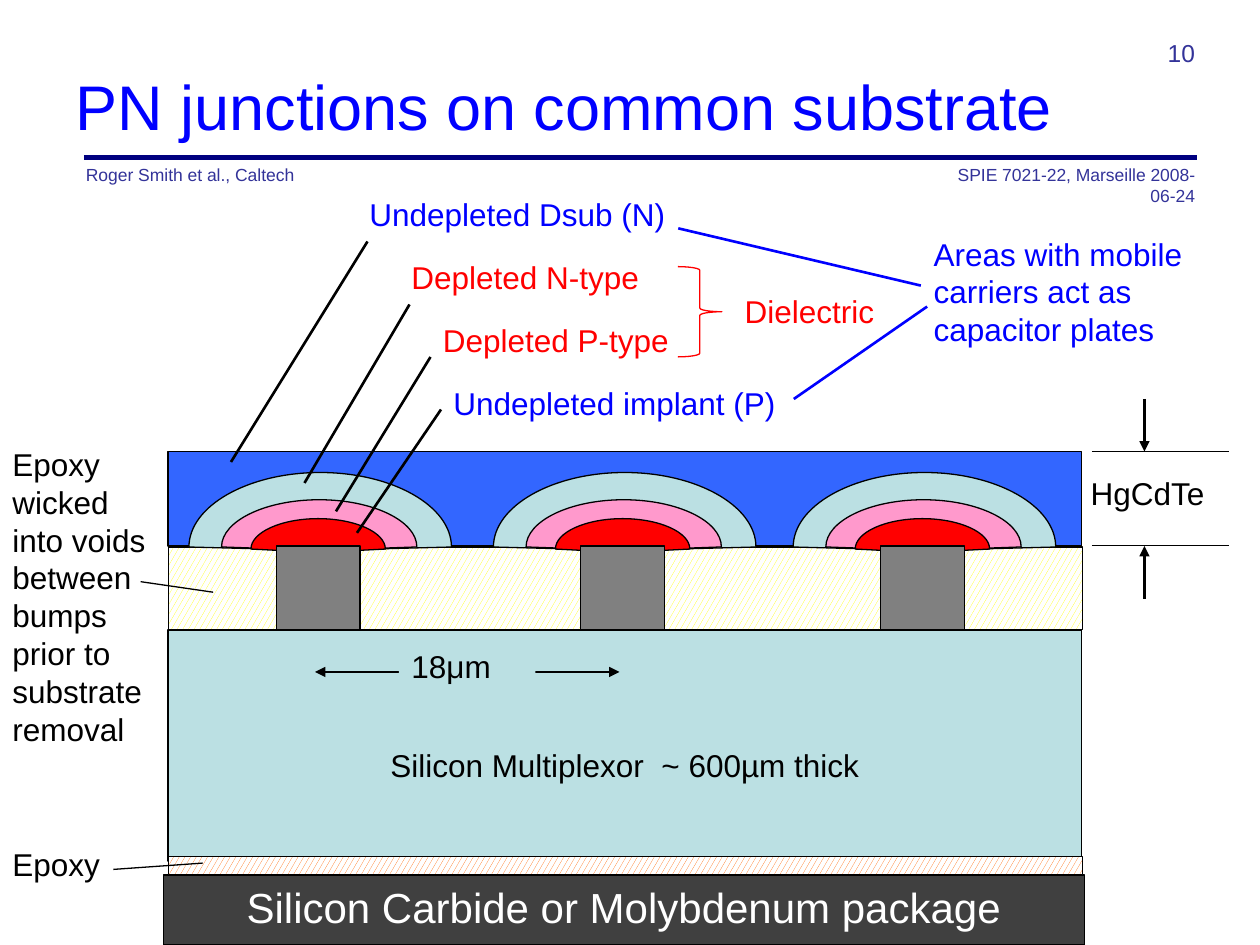
from dataclasses import dataclass

from lxml.etree import SubElement
from pptx import Presentation
from pptx.dml.color import RGBColor
from pptx.enum.dml import MSO_PATTERN
from pptx.enum.shapes import MSO_CONNECTOR, MSO_SHAPE
from pptx.enum.text import MSO_ANCHOR, MSO_AUTO_SIZE, PP_ALIGN
from pptx.oxml.ns import qn
from pptx.util import Inches, Pt


@dataclass(frozen=True)
class Theme:
    font: str = "Arial"
    black: str = "000000"
    white: str = "FFFFFF"
    blue: str = "0000FF"
    red: str = "FF0000"
    navy: str = "000080"
    muted: str = "333399"
    bulk: str = "3366FF"
    pale: str = "BBE0E3"
    pink: str = "FF99CC"
    gray: str = "808080"
    dark: str = "404040"
    yellow: str = "FFFF00"
    orange: str = "FF6600"
    small: int = 10
    page: int = 14
    body: int = 18
    large: int = 24
    title: int = 36
    thin: float = 0.75
    arrow: float = 1.25
    bold: float = 1.5
    rule: float = 2.5


T = Theme()
COLS, ROWS = 120, 90
BEND = 0.55
LEFT, RIGHT = PP_ALIGN.LEFT, PP_ALIGN.RIGHT

TITLE = "PN junctions on common substrate"
HEADER = [
    ("SPIE 7021-22, Marseille 2008-06-24", (88.25, 15, 26.75, 4), T.small, RIGHT),
    ("Roger Smith et al., Caltech", (7, 15, 38, 3), T.small, LEFT),
    ("10", (90, 3, 25, 5), T.page, RIGHT),
]
LABELS = [
    ("Undepleted Dsub (N)", (34, 18, 48, 4.8), T.blue),
    ("Depleted N-type", (38, 24, 32, 4.8), T.red),
    ("Depleted P-type", (41, 30, 32, 4.8), T.red),
    ("Undepleted implant (P)", (42, 36, 48, 4.8), T.blue),
    ("HgCdTe", (102.7, 44.55, 17.3, 6), T.black),
    ("Epoxy wicked into voids between bumps prior to substrate removal",
     (0, 41.8, 16, 30.2), T.black),
    ("Epoxy", (0, 79.9, 16, 4.8), T.black),
    ("Dielectric", (69.75, 27.2, 16.3, 4.8), T.red),
    ("Areas with mobile carriers act as capacitor plates",
     (87.75, 21.75, 32.25, 12.1), T.blue),
]
CENTERS = [30.5, 59.5, 88.05]
DOMES = [
    (0, 12.5, 45, 52.1, 0.7, 15, T.pale),
    (-0.1, 9.3, 47.6, 52.1, 0.55, 9.4, T.pink),
    (-0.2, 6.4, 49.4, 52.3, 0.35, 6, T.red),
]
LINES = [
    ((22, 44), (35, 23), T.black, T.bold, ""),
    ((39, 29), (29, 46), T.black, T.bold, ""),
    ((41, 34), (32, 48.7), T.black, T.bold, ""),
    ((42, 39), (34, 50.75), T.black, T.bold, ""),
    ((104, 43), (117, 43), T.black, T.thin, ""),
    ((104, 51.98), (117, 51.98), T.black, T.thin, ""),
    ((109, 38), (109, 43), T.black, T.arrow, "tail"),
    ((109, 57), (109, 52), T.black, T.arrow, "tail"),
    ((30, 64), (59, 64), T.black, T.bold, "head tail"),
    ((13.4, 55.4), (20.3, 56.4), T.black, T.thin, ""),
    ((10.8, 82.8), (19.3, 82.2), T.black, T.thin, ""),
    ((64.6, 21.75), (87.7, 27.2), T.blue, T.bold, ""),
    ((75.6, 38), (88.3, 29.2), T.blue, T.bold, ""),
]

deck = Presentation()
deck.slide_width, deck.slide_height = Inches(10), Inches(7.5)
slide = deck.slides.add_slide(deck.slide_layouts[5])
shapes = slide.shapes


def grid(*cells):
    units = deck.slide_width / COLS, deck.slide_height / ROWS
    return [round(cell * units[i % 2]) for i, cell in enumerate(cells)]


def rgb(color):
    return RGBColor.from_string(color)


def write(shape, text, size, color, align=LEFT, anchor=MSO_ANCHOR.TOP, wrap=True):
    frame = shape.text_frame
    frame.text = text
    frame.word_wrap = wrap
    frame.auto_size = MSO_AUTO_SIZE.NONE
    frame.vertical_anchor = anchor
    para = frame.paragraphs[0]
    para.alignment = align
    para.font.name, para.font.size = T.font, Pt(size)
    para.font.color.rgb = rgb(color)
    return frame


def label(text, box, size, color, align=LEFT):
    write(shapes.add_textbox(*grid(*box)), text, size, color, align)


def paint(shape, fill=None, line=T.black, hatch=False):
    shape.shadow.inherit = False
    if hatch:
        shape.fill.patterned()
        shape.fill.pattern = MSO_PATTERN.LARGE_CONFETTI
        shape.fill.fore_color.rgb = rgb(fill)
        shape.fill.back_color.rgb = rgb(T.white)
    elif fill:
        shape.fill.solid()
        shape.fill.fore_color.rgb = rgb(fill)
    else:
        shape.fill.background()
    if line:
        shape.line.color.rgb = rgb(line)
        shape.line.width = Pt(T.thin)
    else:
        shape.line.fill.background()
    return shape


def block(box, fill, kind=MSO_SHAPE.RECTANGLE, **style):
    return paint(shapes.add_shape(kind, *grid(*box)), fill, **style)


def link(start, end, color, width, tips=""):
    wire = shapes.add_connector(MSO_CONNECTOR.STRAIGHT, *grid(*start, *end))
    wire.line.color.rgb = rgb(color)
    wire.line.width = Pt(width)
    for tip in tips.split():
        SubElement(wire.line._get_or_add_ln(), qn(f"a:{tip}End"), type="triangle")
    SubElement(wire._element.spPr, qn("a:effectLst"))


def bend(line, start, end, rise):
    (x, y), (u, v) = start, end
    dx, dy = round(BEND * (u - x)), round(BEND * (v - y))
    pair = [(x, y + dy), (u - dx, v)] if rise else [(x + dx, y), (u, v - dy)]
    line.tag = qn("a:cubicBezTo")
    for i, (px, py) in enumerate(pair):
        spot = line.makeelement(qn("a:pt"), x=str(px), y=str(py))
        line.insert(i, spot)


def dome(mid, half, top, base, notch, tall, fill):
    tip = base + 0.3
    dots = [grid(*dot) for dot in (
        (mid - half, base), (mid, top), (mid + half, base),
        (mid + notch, tip), (mid, base), (mid - notch, tip))]
    pen = shapes.build_freeform(*dots[0])
    pen.add_line_segments(dots[1:])
    shape = paint(pen.convert_to_shape(), fill)
    local = [(x - shape.left, y - shape.top) for x, y in dots]
    lines = list(shape._element.iter(qn("a:lnTo")))
    for i, rise in ((0, True), (1, False), (3, True), (4, False)):
        bend(lines[i], local[i], local[i + 1], rise)
    shape.height = grid(0, tall)[1]
    next(shape._element.iter(qn("a:path"))).set("h", str(shape.height))


link((8, 15), (114, 15), T.navy, T.rule)
head = shapes.title
head.left, head.top, head.width, head.height = grid(6, 5, 109, 10)
write(head, TITLE, T.title, T.blue, anchor=MSO_ANCHOR.MIDDLE)
for text, box, size, align in HEADER:
    label(text, box, size, T.muted, align)

block((16.04, 52.1, 87.08, 7.85), T.yellow, hatch=True)
block((16, 43, 87, 9), T.bulk)
for mid in CENTERS:
    for shift, *form in DOMES:
        dome(mid + shift, *form)
    block((mid - 4.2, 52, 8, 8), T.gray)

chip = block((16, 60, 87, 22), T.pale)
frame = write(chip, "Silicon Multiplexor  ~ 600µm thick", T.body, T.black,
              PP_ALIGN.CENTER, MSO_ANCHOR.MIDDLE, False)
frame.margin_top = Inches(0.35)
plate = block((15.54, 83.33, 87.72, 6.67), T.dark)
write(plate, "Silicon Carbide or Molybdenum package", T.large, T.white, PP_ALIGN.CENTER)
block((16.04, 81.6, 87.08, 1.7), T.orange, hatch=True)

for wire in LINES:
    link(*wire)
pitch = block((38, 61, 13, 6), T.pale, line=None)
write(pitch, "18μm", T.body, T.black)
block((64.55, 25.4, 4.2, 8.6), None, MSO_SHAPE.RIGHT_BRACE, line=T.red)
for text, box, color in LABELS:
    label(text, box, T.body, color)

deck.save("out.pptx")
